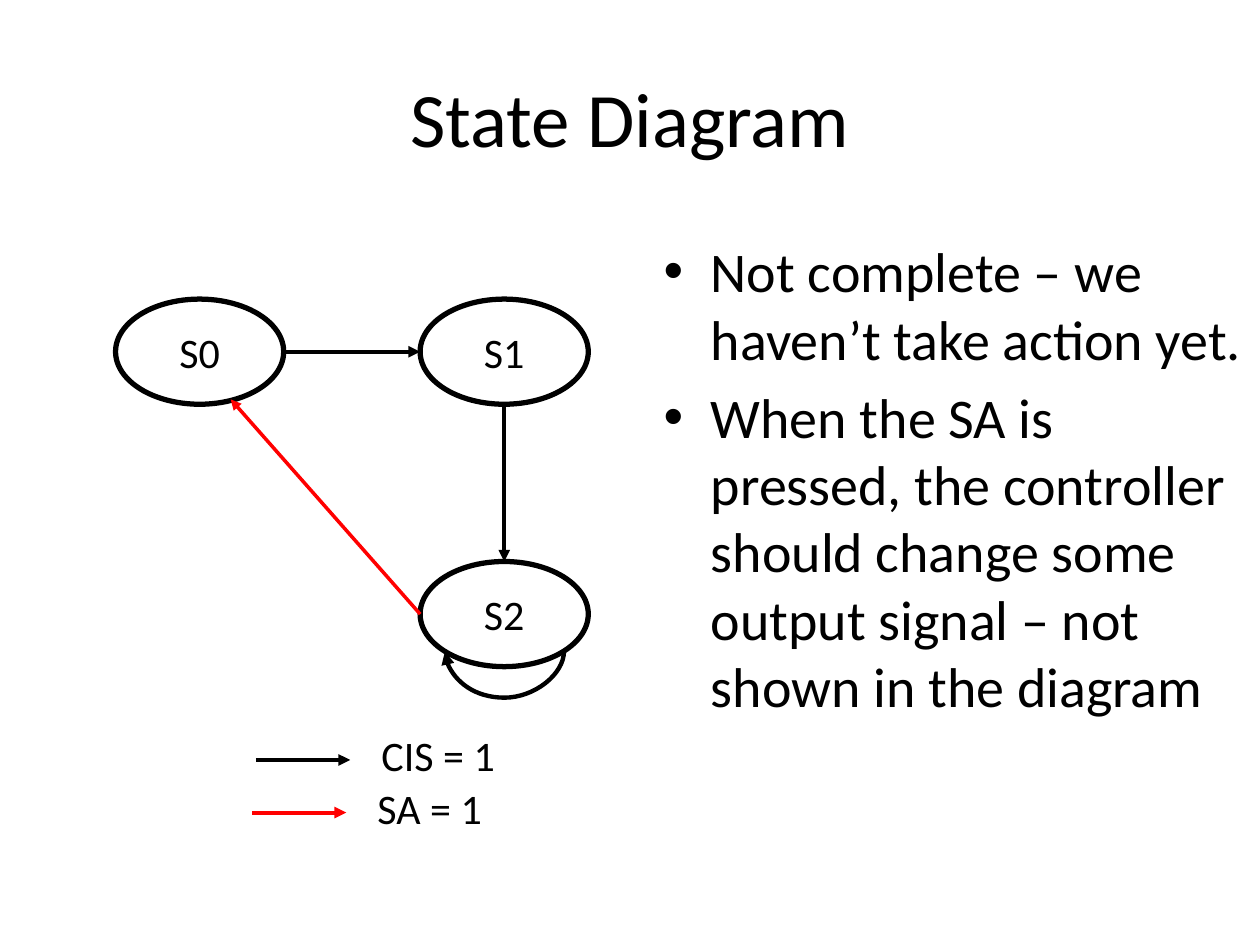
from lxml import etree
from pptx import Presentation
from pptx import util as u
from pptx.dml.color import RGBColor
from pptx.enum import shapes, text
from pptx.oxml.ns import qn

Cm, Pt = u.Cm, u.Pt
BLACK = RGBColor(0x00, 0x00, 0x00)
RED = RGBColor(0xFF, 0x00, 0x00)


def write(frame, lines, size, align, **frame_format):
    """Fill a text frame, one paragraph per line."""
    for name, value in frame_format.items():
        setattr(frame, name, value)
    for number, line in enumerate(lines):
        paragraph = frame.add_paragraph() if number else frame.paragraphs[0]
        paragraph.alignment = align
        run = paragraph.add_run()
        run.text = line
        for name, value in {"size": Pt(size), "name": "Calibri"}.items():
            setattr(run.font, name, value)
        run.font.color.rgb = BLACK


def arrow(kind, start, end, color, width):
    """Draw a connector with a triangle at its end."""
    connector = slide.shapes.add_connector(kind, *map(Cm, start + end))
    connector.line.color.rgb = color
    connector.line.width = Pt(width)
    etree.SubElement(connector.line._get_or_add_ln(), qn("a:tailEnd"), type="triangle")
    etree.SubElement(connector._element.spPr, qn("a:effectLst"))
    return connector


deck = Presentation()
deck.slide_width, deck.slide_height = Cm(25.4), Cm(19.05)
slide = deck.slides.add_slide(deck.slide_layouts[5])
LEFT, CENTER = text.PP_ALIGN.LEFT, text.PP_ALIGN.CENTER
MIDDLE = text.MSO_ANCHOR.MIDDLE
STRAIGHT, CURVE = shapes.MSO_CONNECTOR.STRAIGHT, shapes.MSO_CONNECTOR.CURVE

# Title
title = slide.shapes.title
title_place = {"left": 1.27, "top": 0.76, "width": 22.86, "height": 3.18}
for name, value in title_place.items():
    setattr(title, name, Cm(value))
write(title.text_frame, ["State Diagram"], 44, CENTER, vertical_anchor=MIDDLE)

# Remarks
remarks = slide.shapes.add_textbox(Cm(13.13), Cm(4.65), Cm(12.27), Cm(12.57))
write(remarks.text_frame, [
    "Not complete – we haven’t take action yet.",
    "When the SA is pressed, the controller should change some output signal"
    " – not shown in the diagram",
], 32, LEFT, word_wrap=True)
for remark in remarks.text_frame.paragraphs:
    remark.space_before = Pt(6.4)
    properties = remark._p.get_or_add_pPr()
    properties.set("marL", str(Cm(0.95)))
    properties.set("indent", str(-Cm(0.95)))
    etree.SubElement(properties, qn("a:buFont"), typeface="Arial")
    etree.SubElement(properties, qn("a:buChar"), char="•")

# States
state_width, state_height = 3.39, 2.12
states = {"S0": (2.33, 6.03), "S1": (8.47, 6.03), "S2": (8.47, 11.32)}
for label, (left, top) in states.items():
    state = slide.shapes.add_shape(
        shapes.MSO_SHAPE.OVAL, Cm(left), Cm(top), Cm(state_width), Cm(state_height))
    state.shadow.inherit = False
    state.fill.background()
    state.line.color.rgb = BLACK
    state.line.width = Pt(3)
    write(state.text_frame, [label], 24, CENTER, vertical_anchor=MIDDLE, word_wrap=False)

# Transitions between states
(s0_left, s0_top), (s1_left, s1_top), (s2_left, s2_top) = states.values()
row_middle = s0_top + state_height / 2
column_middle = s1_left + state_width / 2
arrow(STRAIGHT, (column_middle, s1_top + state_height), (column_middle, s2_top), BLACK, 2.25)
arrow(STRAIGHT, (s0_left + state_width, row_middle), (s1_left, row_middle), BLACK, 2.25)
arrow(STRAIGHT, (s2_left, s2_top + state_height / 2), (4.65, 8.05), RED, 2)

# Loop on S2: a thin upright curve turned by 90 degrees, bulging 0.94 cm
loop_middle, loop_span, loop_depth, loop_thin = 13.13, 2.4, 0.94, 0.01
loop = arrow(CURVE, (column_middle, loop_middle - loop_span / 2),
             (column_middle + loop_thin, loop_middle + loop_span / 2), BLACK, 2.5)
loop._element.spPr.find(qn("a:xfrm")).set("rot", str(90 * 60000))
bulge = round(loop_depth / loop_thin * 100000)
adjustments = loop._element.spPr.find(qn("a:prstGeom")).find(qn("a:avLst"))
etree.SubElement(adjustments, qn("a:gd"), name="adj1", fmla=f"val {bulge}")

# Legend
legend = [("CIS = 1", 5.16, 15.32, 2.82, BLACK), ("SA = 1", 5.08, 16.38, 2.64, RED)]
for meaning, left, middle, width, color in legend:
    arrow(STRAIGHT, (left, middle), (left + 1.9, middle), color, 2.25)
    entry = slide.shapes.add_textbox(Cm(left + 2.28), Cm(middle - 0.74), Cm(width), Cm(1.3))
    write(entry.text_frame, [meaning], 24, LEFT, word_wrap=False,
          auto_size=text.MSO_AUTO_SIZE.SHAPE_TO_FIT_TEXT)

deck.save("out.pptx")
